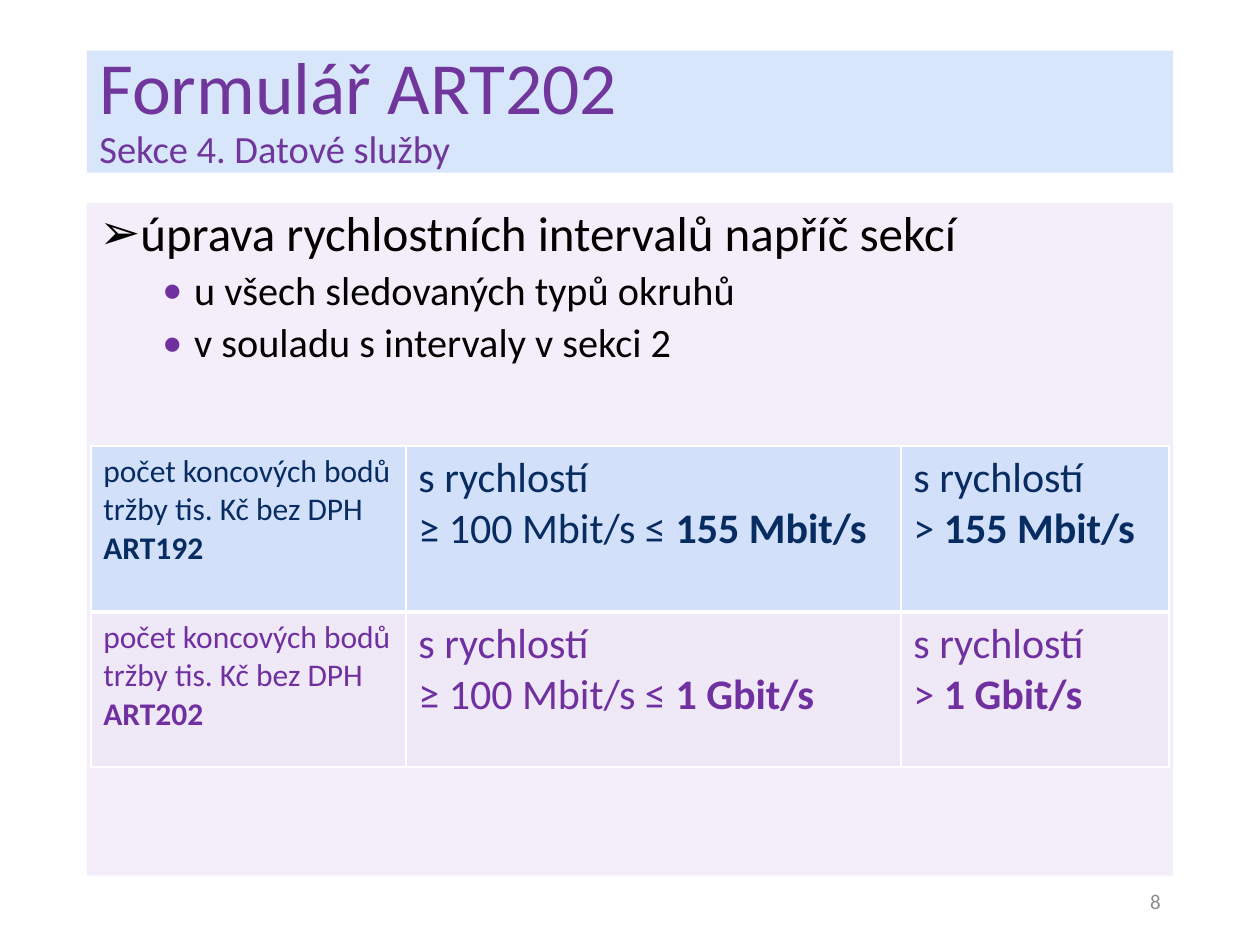
"""Build the slide on speed intervals in section 4 of form ART202."""
from lxml.etree import SubElement
from pptx import Presentation
from pptx.dml.color import RGBColor
from pptx.enum.text import MSO_ANCHOR as Anchor, MSO_AUTO_SIZE as AutoSize, PP_ALIGN as Align
from pptx.oxml.ns import qn
from pptx.util import Cm, Pt

FONT = "Calibri"
COLORS = {
    "blue": "C2D9FA", "lilac": "EEE5F7", "title": "70369B", "violet": "7030A0",
    "navy": "072C62", "black": "000000", "gray": "8C8C8C", "white": "FFFFFF",
}
TITLE = [("Formulář ART202", 42), ("Sekce 4. Datové služby", 22)]
BULLETS = [
    (0, "úprava rychlostních intervalů napříč sekcí"),
    (1, "u všech sledovaných typů okruhů"),
    (1, "v souladu s intervaly v sekci 2"),
]
LEVELS = [
    {"char": "➢", "color": "black", "size": 28, "margin": 0.64, "before": 10},
    {"char": "•", "color": "violet", "size": 23, "margin": 1.91, "before": 5},
]
FORMS = [("ART192", "155 Mbit/s", "blue", "navy"), ("ART202", "1 Gbit/s", "lilac", "violet")]
COLUMN_WIDTHS = [6.35, 9.98, 5.41]
ROW_HEIGHTS = [3.35, 3.12]
PAGE_NUMBER = "8"


def style(span, size, color, bold=False):
    font = span.font
    font.name, font.size, font.bold = FONT, Pt(size), bold
    font.color.rgb = RGBColor.from_string(COLORS[color])


def tint(fill, properties, color):
    fill.solid()
    fill.fore_color.rgb = RGBColor.from_string(COLORS[color])
    SubElement(properties.find(qn("a:solidFill"))[0], qn("a:alpha"), val="65000")


def place(shape, left, top, width, height):
    shape.left, shape.top, shape.width, shape.height = map(Cm, (left, top, width, height))


def add_title(box):
    place(box, 1.75, 1.02, 21.9, 2.46)
    tint(box.fill, box._element.spPr, "blue")
    frame = box.text_frame
    frame.auto_size, frame.vertical_anchor = AutoSize.NONE, Anchor.MIDDLE
    frame.text = "\v".join(text for text, size in TITLE)
    para = frame.paragraphs[0]
    para.alignment, para.line_spacing = Align.LEFT, 0.9
    for span, (text, size) in zip(para.runs, TITLE):
        style(span, size, "title")


def add_bullets(box):
    place(box, 1.75, 4.09, 21.9, 13.56)
    tint(box.fill, box._element.spPr, "lilac")
    frame = box.text_frame
    frame.auto_size = AutoSize.NONE
    frame.text = "\n".join(text for level, text in BULLETS)
    for index, (para, (level, text)) in enumerate(zip(frame.paragraphs, BULLETS)):
        look = LEVELS[level]
        para.level = level
        properties = para._p.get_or_add_pPr()
        properties.set("marL", str(Cm(look["margin"])))
        properties.set("indent", str(-Cm(0.64)))
        bullet_color = SubElement(properties, qn("a:buClr"))
        SubElement(bullet_color, qn("a:srgbClr"), val=COLORS[look["color"]])
        SubElement(properties, qn("a:buFont"), typeface=FONT)
        SubElement(properties, qn("a:buChar"), char=look["char"])
        para.line_spacing = 0.9
        para.space_before = Pt(look["before"] if index else 0)
        style(para.runs[0], look["size"], "black")


def add_borders(cell, widths):
    properties = cell._tc.get_or_add_tcPr()
    for side, width in zip("LRTB", widths):
        line = SubElement(properties, qn(f"a:ln{side}"), w=str(Pt(width)))
        SubElement(SubElement(line, qn("a:solidFill")), qn("a:srgbClr"), val=COLORS["white"])


def fill_cell(cell, lines, size, color):
    cell.text = "\n".join("".join(parts) for parts in lines)
    for para, (plain, strong) in zip(cell.text_frame.paragraphs, lines):
        para.text = plain or strong
        style(para.runs[0], size, color, bold=not plain)
        if plain and strong:
            span = para.add_run()
            span.text = strong
            style(span, size, color, bold=True)


def add_speed_table(page):
    frame = page.shapes.add_table(
        len(FORMS), len(COLUMN_WIDTHS), Cm(1.83), Cm(8.99),
        Cm(sum(COLUMN_WIDTHS)), Cm(sum(ROW_HEIGHTS)))
    table = frame.table
    table.first_row = table.horz_banding = False
    for column, width in zip(table.columns, COLUMN_WIDTHS):
        column.width = Cm(width)
    for index, (row, height, form) in enumerate(zip(table.rows, ROW_HEIGHTS, FORMS)):
        row.height = Cm(height)
        name, limit, background, color = form
        contents = [
            (18, [("počet koncových bodů", ""), ("tržby tis. Kč bez DPH", ""), ("", name)]),
            (24, [("s rychlostí", ""), ("≥ 100 Mbit/s ≤ ", limit)]),
            (24, [("s rychlostí", ""), ("> ", limit)]),
        ]
        for cell, (size, lines) in zip(row.cells, contents):
            add_borders(cell, (1, 1, 3, 1) if index else (1, 1, 1, 3))
            tint(cell.fill, cell._tc.tcPr, background)
            fill_cell(cell, lines, size, color)


def add_page_number(page):
    box = page.shapes.add_textbox(Cm(17.93), Cm(17.65), Cm(5.72), Cm(1.02))
    frame = box.text_frame
    frame.word_wrap, frame.vertical_anchor = True, Anchor.MIDDLE
    frame.text = PAGE_NUMBER
    para = frame.paragraphs[0]
    para.alignment = Align.RIGHT
    style(para.runs[0], 12, "gray")


def main():
    deck = Presentation()
    deck.slide_width, deck.slide_height = Cm(25.4), Cm(19.05)
    page = deck.slides.add_slide(deck.slide_layouts[1])
    add_title(page.shapes.title)
    add_bullets(page.placeholders[1])
    add_speed_table(page)
    add_page_number(page)
    deck.save("out.pptx")


if __name__ == "__main__":
    main()
